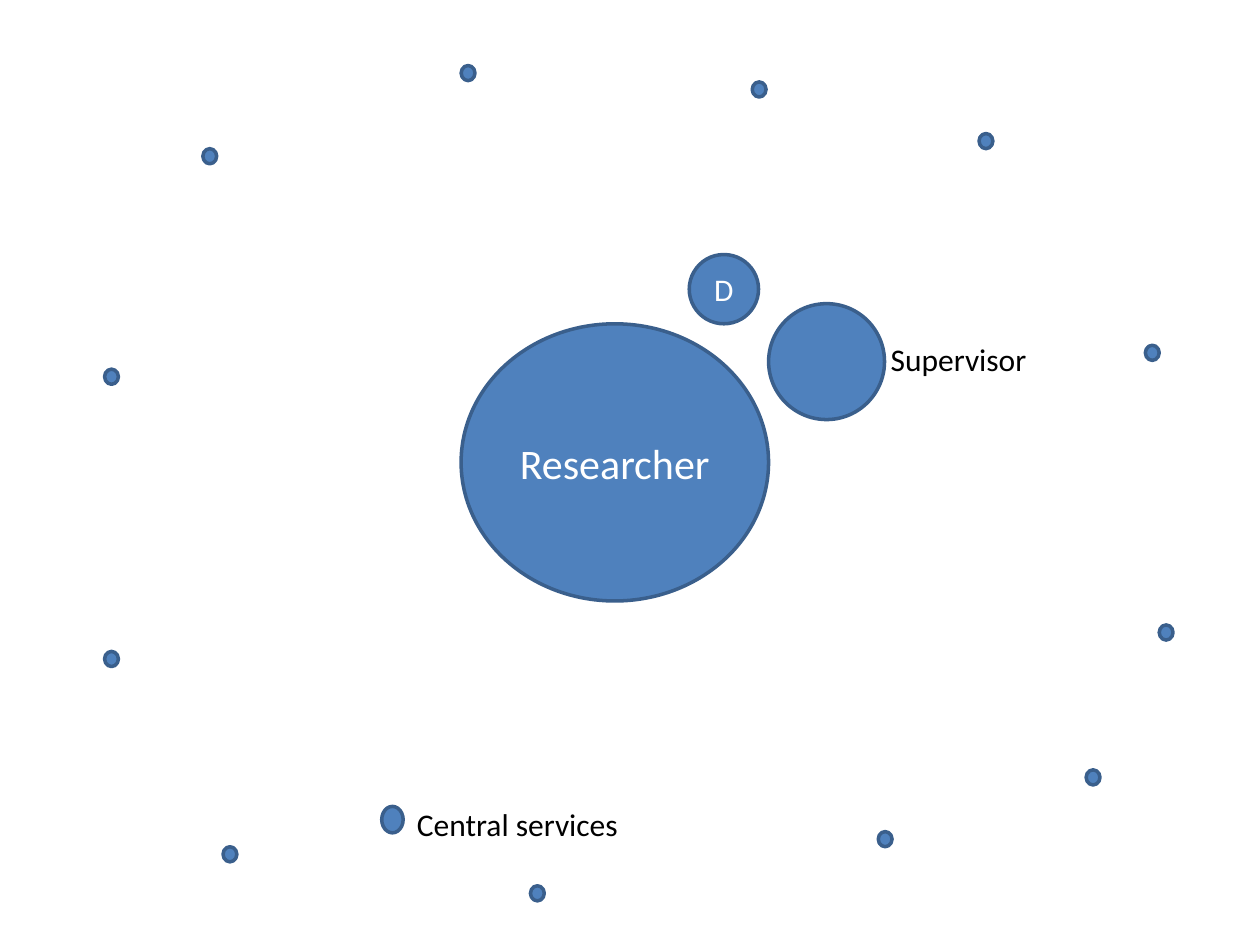
"""Build a slide of a researcher surrounded by supporting roles and services."""
from pptx import Presentation
from pptx.dml.color import RGBColor
from pptx.enum.shapes import MSO_SHAPE
from pptx.enum.text import MSO_ANCHOR, MSO_AUTO_SIZE, PP_ALIGN
from pptx.util import Inches, Pt

BLUE = RGBColor(0x4F, 0x81, 0xBD)
DARK_BLUE = RGBColor(0x3A, 0x5F, 0x8C)
WHITE = RGBColor(0xFF, 0xFF, 0xFF)
BLACK = RGBColor(0x00, 0x00, 0x00)

presentation = Presentation()
presentation.slide_width = Inches(10)
presentation.slide_height = Inches(7.5)
slide = presentation.slides.add_slide(presentation.slide_layouts[6])
column = presentation.slide_width / 100
row = presentation.slide_height / 75


def place(left, top, width, height):
    return (round(left * column), round(top * row),
            round(width * column), round(height * row))


def write(shape, text, size, color, alignment):
    paragraph = shape.text_frame.paragraphs[0]
    paragraph.text = text
    paragraph.alignment = alignment
    paragraph.font.name = "Calibri"
    paragraph.font.size = Pt(size)
    paragraph.font.color.rgb = color


role_circles = [
    (36.6, 25.7, 24.4, 22, "Researcher", 24),
    (54.7, 20.2, 5.5, 5.5, "D", 18),
    (61, 24.1, 9.2, 9.2, "", 18),
    (30.3, 64, 1.7, 2.1, "", 18),
]
dot_positions = [
    (59.7, 6.5), (77.7, 10.6), (69.7, 66), (90.9, 27.4),
    (92, 49.6), (36.6, 5.2), (16.1, 11.8), (8.3, 29.3),
    (8.3, 51.7), (17.7, 67.2), (42.1, 70.3), (86.2, 61.1),
]
dots = [(left, top, 1.1, 1.2, "", 18) for left, top in dot_positions]

for left, top, width, height, text, size in role_circles + dots:
    circle = slide.shapes.add_shape(MSO_SHAPE.OVAL, *place(left, top, width, height))
    circle.shadow.inherit = False
    circle.fill.solid()
    circle.fill.fore_color.rgb = BLUE
    circle.line.color.rgb = DARK_BLUE
    circle.line.width = Pt(2)
    circle.text_frame.vertical_anchor = MSO_ANCHOR.MIDDLE
    if text:
        write(circle, text, size, WHITE, PP_ALIGN.CENTER)

for left, top, width, text in [
    (69.7, 26.5, 13.9, "Supervisor"),
    (32.1, 63.4, 21.1, "Central services"),
]:
    label = slide.shapes.add_textbox(*place(left, top, width, 4))
    label.text_frame.word_wrap = True
    label.text_frame.auto_size = MSO_AUTO_SIZE.SHAPE_TO_FIT_TEXT
    write(label, text, 18, BLACK, PP_ALIGN.LEFT)

presentation.save("out.pptx")
